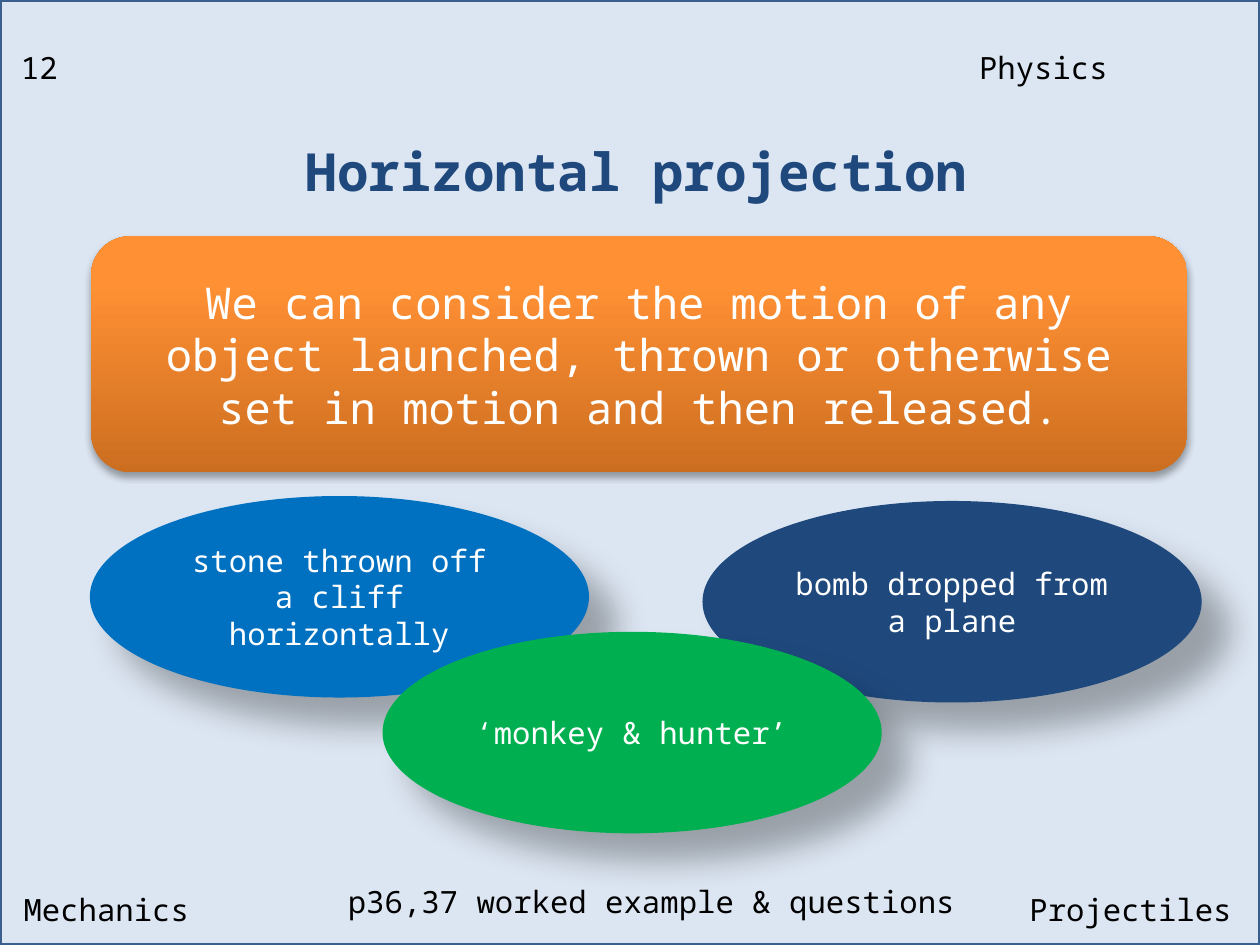
from lxml import etree
from pptx import Presentation
from pptx.dml.color import RGBColor
from pptx.enum.shapes import MSO_SHAPE
from pptx.enum.text import MSO_ANCHOR, MSO_AUTO_SIZE, PP_ALIGN
from pptx.oxml.ns import qn
from pptx.util import Cm, Pt

LEFT, CENTER, RIGHT = PP_ALIGN.LEFT, PP_ALIGN.CENTER, PP_ALIGN.RIGHT
TOP, MIDDLE = MSO_ANCHOR.TOP, MSO_ANCHOR.MIDDLE
FIT_SHAPE = MSO_AUTO_SIZE.SHAPE_TO_FIT_TEXT
RECTANGLE, ROUNDED, OVAL = MSO_SHAPE.RECTANGLE, MSO_SHAPE.ROUNDED_RECTANGLE, MSO_SHAPE.OVAL

FONT = "Noto Sans Mono"
WIDTH, HEIGHT = 20.32, 15.24
LABEL_HEIGHT = 0.86
PALE, NAVY, BORDER = "DCE6F2", "1F497D", "3A5F8C"
BLUE, GREEN, WHITE, BLACK = "0070C0", "00B050", "FFFFFF", "000000"
STATEMENT_STOPS = [(0, "CC6E20"), (80, "FF9034"), (100, "FF9136")]


def color(hex_string):
    """Turn a hex string into a colour."""
    return RGBColor.from_string(hex_string)


def write(shape, text, size=14, fill=BLACK, bold=False, align=LEFT, anchor=TOP):
    """Write one formatted paragraph into a shape."""
    frame = shape.text_frame
    frame.word_wrap = True
    frame.vertical_anchor = anchor
    paragraph = frame.paragraphs[0]
    paragraph.alignment = align
    run = paragraph.add_run()
    run.text = text
    run.font.name = FONT
    run.font.size = Pt(size)
    run.font.bold = bold
    run.font.color.rgb = color(fill)


def place(shape, box):
    """Move a shape to a box given in centimetres."""
    shape.left, shape.top, shape.width, shape.height = map(Cm, box)


def add_color(parent, hex_string):
    """Append a colour element to an XML parent."""
    return etree.SubElement(parent, qn("a:srgbClr"), val=hex_string)


def add_shadow(shape, opacity, blur, distance, angle):
    """Give a shape an outer black shadow."""
    shape.shadow.inherit = False
    effects = shape._element.spPr.find(qn("a:effectLst"))
    shadow = etree.SubElement(
        effects, qn("a:outerShdw"), blurRad=str(Pt(blur)), dist=str(Pt(distance)),
        dir=str(angle * 60000), algn="tl", rotWithShape="0")
    etree.SubElement(add_color(shadow, BLACK), qn("a:alpha"), val=str(opacity * 1000))


def add_frame(slide, box):
    """Fill the background and draw the border around it."""
    slide.background.fill.solid()
    slide.background.fill.fore_color.rgb = color(PALE)
    shape = slide.shapes.add_shape(RECTANGLE, *map(Cm, box))
    shape.shadow.inherit = False
    shape.fill.background()
    shape.line.color.rgb = color(BORDER)
    shape.line.width = Pt(2)


def add_label(slide, text, box, align=LEFT):
    """Add a small black text label."""
    label = slide.shapes.add_textbox(*map(Cm, box))
    write(label, text, align=align)
    label.text_frame.auto_size = FIT_SHAPE


def add_corner_labels(slide, box):
    """Add the page number, subject, unit and topic at the corners."""
    left, top, width, height = box
    header, footer = top + 0.66, top + height - 0.99
    add_label(slide, "12", (left, header, 1.27, LABEL_HEIGHT), CENTER)
    add_label(slide, "Physics", (left + width - 6.35, header, 5.72, LABEL_HEIGHT), CENTER)
    add_label(slide, "Mechanics", (left + 0.13, footer, 5.72, LABEL_HEIGHT))
    add_label(slide, "Projectiles", (left + width - 11.43, footer, 11.23, LABEL_HEIGHT), RIGHT)


def add_title(slide, box):
    """Place the title in the title placeholder."""
    title = slide.shapes.title
    place(title, box)
    write(title, "Horizontal projection", size=24, fill=NAVY, bold=True, align=CENTER)
    title.text_frame.auto_size = FIT_SHAPE


def add_statement(slide, box):
    """Add the orange statement panel."""
    shape = slide.shapes.add_shape(ROUNDED, *map(Cm, box))
    shape.fill.gradient()
    shape.fill.gradient_angle = 90
    stops = shape._element.spPr.find(qn("a:gradFill")).find(qn("a:gsLst"))
    for stop in list(stops):
        stops.remove(stop)
    for position, hex_string in STATEMENT_STOPS:
        add_color(etree.SubElement(stops, qn("a:gs"), pos=str(position * 1000)), hex_string)
    shape.line.fill.background()
    add_shadow(shape, opacity=35, blur=3.1, distance=1.8, angle=90)
    write(shape, "We can consider the motion of any object launched, thrown or "
          "otherwise set in motion and then released.",
          size=20, fill=WHITE, align=CENTER, anchor=MIDDLE)


def add_examples(slide, box):
    """Add the three overlapping example ellipses."""
    left, top, width, height = box
    examples = [
        ("stone thrown off a cliff horizontally", BLUE, 0, 0),
        ("bomb dropped from a plane", NAVY, 9.88, 0.08),
        ("‘monkey & hunter’", GREEN, 4.72, 2.19),
    ]
    for text, fill, across, down in examples:
        shape = slide.shapes.add_shape(
            OVAL, Cm(left + across), Cm(top + down), Cm(width), Cm(height))
        shape.fill.solid()
        shape.fill.fore_color.rgb = color(fill)
        shape.line.fill.background()
        add_shadow(shape, opacity=30, blur=15, distance=18, angle=45)
        write(shape, text, fill=WHITE, align=CENTER, anchor=MIDDLE)


def main():
    """Build and save the presentation."""
    presentation = Presentation()
    presentation.slide_width, presentation.slide_height = Cm(WIDTH), Cm(HEIGHT)
    slide = presentation.slides.add_slide(presentation.slide_layouts[5])
    page = (0, 0, WIDTH, HEIGHT)
    add_frame(slide, page)
    add_corner_labels(slide, page)
    add_title(slide, (3.38, 2.11, 13.77, 1.27))
    add_statement(slide, (1.47, 3.81, 17.68, 3.81))
    add_label(slide, "p36,37 worked example & questions", (5.36, 14.12, 10.54, LABEL_HEIGHT))
    add_examples(slide, (1.45, 8, 8.05, 3.25))
    presentation.save("out.pptx")


if __name__ == "__main__":
    main()
